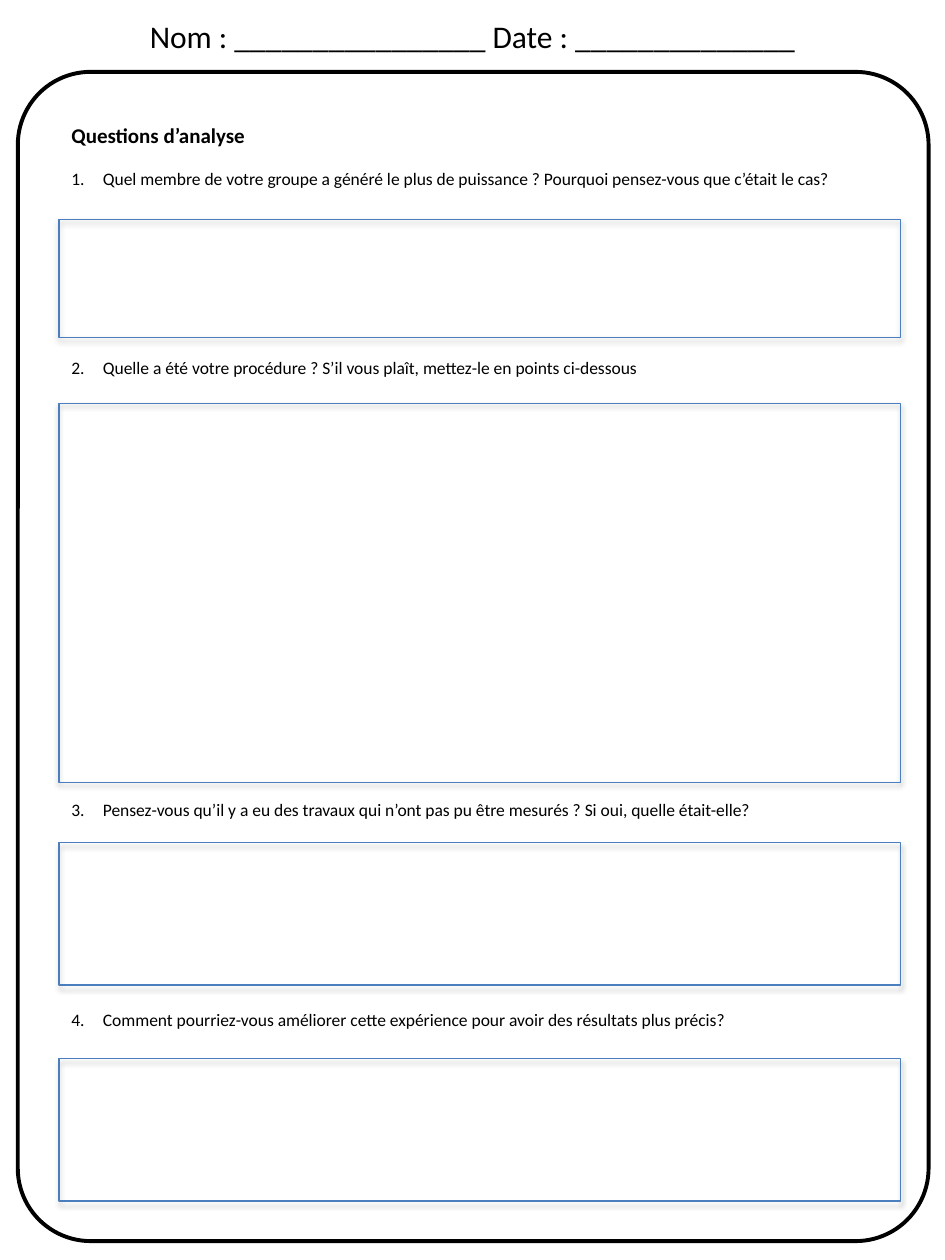
"""Build a one-page worksheet with four questions and answer boxes."""
import pptx
import pptx.dml.color
import pptx.enum.shapes
import pptx.enum.text
import pptx.util
from lxml import etree
from pptx.oxml import ns

Cm = pptx.util.Cm
Pt = pptx.util.Pt
KIND = pptx.enum.shapes.MSO_SHAPE
FONT = "Calibri"
COLORS = {"ink": "000000", "edge": "4B7EBC"}
LEFT, WIDTH = 1.19, 16.97
QUESTIONS = [
    ("Quel membre de votre groupe a généré le plus de puissance ? Pourquoi pensez-vous que c’était le cas?", 12),
    ("Quelle a été votre procédure ? S’il vous plaît, mettez-le en points ci-dessous", 96),
    ("Pensez-vous qu’il y a eu des travaux qui n’ont pas pu être mesurés ? Si oui, quelle était-elle?", 240.5),
    ("Comment pourriez-vous améliorer cette expérience pour avoir des résultats plus précis?", 108),
]
BOXES = [(4.42, 2.39), (8.13, 7.65), (16.99, 2.87), (21.34, 2.87)]


def color(name):
    return pptx.dml.color.RGBColor.from_string(COLORS[name])


def add_text(slide, left, top, width, height):
    frame = slide.shapes.add_textbox(Cm(left), Cm(top), Cm(width), Cm(height)).text_frame
    frame.word_wrap = True
    return frame


def add_run(para, text, size, bold=False):
    run = para.add_run()
    run.text = text
    run.font.name = FONT
    run.font.size = Pt(size)
    run.font.bold = bold
    run.font.color.rgb = color("ink")


def add_item(frame, text, space):
    para = frame.add_paragraph()
    props = para._p.get_or_add_pPr()
    props.set("marL", str(Cm(0.635)))
    props.set("indent", str(-Cm(0.635)))
    etree.SubElement(props, ns.qn("a:buFont"), typeface="+mj-lt")
    etree.SubElement(props, ns.qn("a:buAutoNum"), type="arabicPeriod")
    para.space_before = Pt(space)
    add_run(para, text, 10)


def add_box(slide, kind, left, top, width, height, line, weight):
    shape = slide.shapes.add_shape(kind, Cm(left), Cm(top), Cm(width), Cm(height))
    shape.shadow.inherit = False
    shape.fill.background()
    shape.line.color.rgb = color(line)
    shape.line.width = Pt(weight)
    return shape


def add_shade(shape):
    effects = shape._element.spPr.find(ns.qn("a:effectLst"))
    shade = etree.SubElement(
        effects, ns.qn("a:outerShdw"), blurRad=str(Pt(3.1)),
        dist=str(Pt(1.8)), dir="5400000", rotWithShape="0")
    tint = etree.SubElement(shade, ns.qn("a:srgbClr"), val=COLORS["ink"])
    etree.SubElement(tint, ns.qn("a:alpha"), val="35000")


def main():
    deck = pptx.Presentation()
    deck.slide_width, deck.slide_height = Cm(19.05), Cm(25.4)
    slide = deck.slides.add_slide(deck.slide_layouts[6])

    header = add_text(slide, 0, -0.05, 19.05, 1.55)
    header.vertical_anchor = pptx.enum.text.MSO_ANCHOR.MIDDLE
    para = header.paragraphs[0]
    para.alignment = pptx.enum.text.PP_ALIGN.CENTER
    add_run(para, "Nom : ________________ Date : ______________", 18)

    border = add_box(slide, KIND.ROUNDED_RECTANGLE, 0.36, 1.45, 18.36, 23.57, "ink", 2.25)
    border.adjustments[0] = 0.08

    body = add_text(slide, LEFT, 2.34, WIDTH, 23.06)
    add_run(body.paragraphs[0], "Questions d’analyse", 12, True)
    for text, space in QUESTIONS:
        add_item(body, text, space)

    for top, height in BOXES:
        add_shade(add_box(slide, KIND.RECTANGLE, LEFT, top, WIDTH, height, "edge", 0.75))

    deck.save("out.pptx")


if __name__ == "__main__":
    main()
